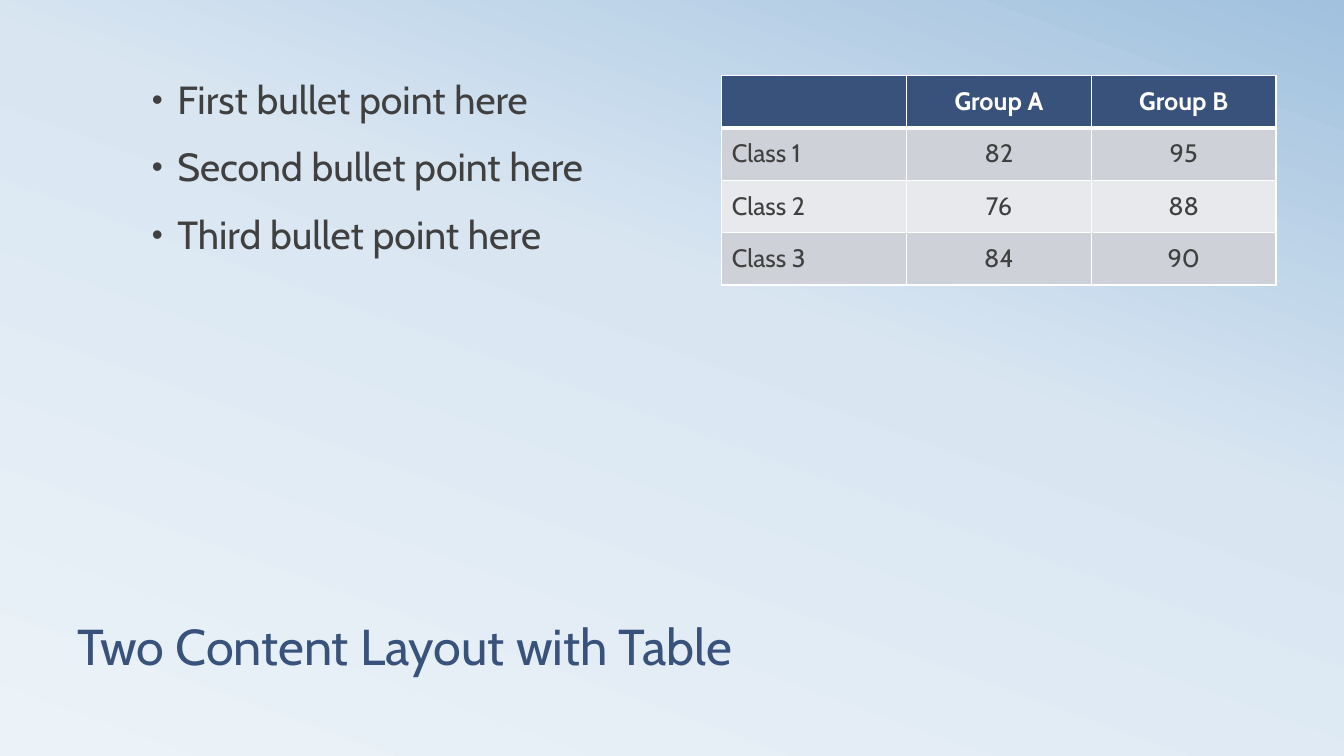
import copy
from dataclasses import dataclass

import pptx
import pptx.dml.color
import pptx.enum.text
import pptx.oxml
import pptx.oxml.ns
import pptx.util

Cm = pptx.util.Cm
Pt = pptx.util.Pt
Align = pptx.enum.text.PP_ALIGN
Anchor = pptx.enum.text.MSO_ANCHOR
qn = pptx.oxml.ns.qn


@dataclass(frozen=True)
class Theme:
    font: str = "Cabin"
    navy: str = "39527B"
    ink: str = "404040"
    white: str = "FFFFFF"
    bands: tuple = ("CED1D7", "E8E9EC")
    sky: tuple = ((0, "ECF3F8"), (0.58, "D9E6F2"), (1, "A1C1DE"))
    angle: int = 70
    title: int = 36
    body: int = 28
    cell: int = 18
    thin: int = 1
    thick: int = 3


THEME = Theme()

TITLE = "Two Content Layout with Table"
POINTS = (
    "First bullet point here",
    "Second bullet point here",
    "Third bullet point here",
)
SCORES = (
    ("", "Group A", "Group B"),
    ("Class 1", "82", "95"),
    ("Class 2", "76", "88"),
    ("Class 3", "84", "90"),
)


def rgb(code):
    return pptx.dml.color.RGBColor.from_string(code)


def add_node(parent, tag, attrs, inner=""):
    space = pptx.oxml.ns.nsdecls("a")
    xml = f"<a:{tag} {space} {attrs}>{inner}</a:{tag}>"
    parent.append(pptx.oxml.parse_xml(xml))


def paint_sky(slide):
    fill = slide.background.fill
    fill.gradient()
    fill.gradient_angle = THEME.angle
    stops = next(slide.element.iter(qn("a:gsLst")))
    stops.append(copy.deepcopy(stops[0]))
    for stop, (place, code) in zip(fill.gradient_stops, THEME.sky):
        stop.position = place
        stop.color.rgb = rgb(code)


def add_run(para, text, size, code, bold=False):
    run = para.add_run()
    run.text = text
    font = run.font
    font.name = THEME.font
    font.size = Pt(size)
    font.bold = bold
    font.color.rgb = rgb(code)


def add_box(slide, left, top, width, height, anchor):
    box = slide.shapes.add_textbox(Cm(left), Cm(top), Cm(width), Cm(height))
    frame = box.text_frame
    frame.word_wrap = True
    frame.vertical_anchor = anchor
    return frame


def add_title(slide, text):
    frame = add_box(slide, 1.7, 14.17, 30.48, 2.97, Anchor.BOTTOM)
    para = frame.paragraphs[0]
    para.line_spacing = 0.8
    add_run(para, text, THEME.title, THEME.navy)


def set_bullet(para):
    props = para._p.get_or_add_pPr()
    props.set("marL", str(Cm(0.64)))
    props.set("indent", str(Cm(-0.64)))
    add_node(props, "buClr", "", f'<a:srgbClr val="{THEME.ink}"/>')
    add_node(props, "buSzPct", 'val="80000"')
    add_node(props, "buFont", 'typeface="Arial"')
    add_node(props, "buChar", 'char="•"')


def add_list(slide, points):
    frame = add_box(slide, 3.58, 1.9, 13.97, 11.63, Anchor.TOP)
    for index, text in enumerate(points):
        para = frame.add_paragraph() if index else frame.paragraphs[0]
        para.line_spacing = 0.9
        para.space_before = Pt(18)
        set_bullet(para)
        add_run(para, text, THEME.body, THEME.ink)


def set_edges(cell, row):
    props = cell._tc.get_or_add_tcPr()
    wide = {"T": row == 1, "B": row == 0}
    paint = f'<a:solidFill><a:srgbClr val="{THEME.white}"/></a:solidFill>'
    for side in "LRTB":
        width = Pt(THEME.thick if wide.get(side) else THEME.thin)
        add_node(props, f"ln{side}", f'w="{width}"', paint)


def fill_cell(cell, text, row, col):
    head = row == 0
    set_edges(cell, row)
    cell.fill.solid()
    cell.fill.fore_color.rgb = rgb(THEME.navy if head else THEME.bands[(row - 1) % 2])
    cell.vertical_anchor = Anchor.MIDDLE
    para = cell.text_frame.paragraphs[0]
    para.alignment = Align.CENTER if head or col else Align.LEFT
    if text:
        add_run(para, text, THEME.cell, THEME.white if head else THEME.ink, head)


def add_grid(slide, rows):
    frame = slide.shapes.add_table(
        len(rows), len(rows[0]), Cm(18.19), Cm(1.9), Cm(13.97), Cm(5.28)
    )
    for row, texts in enumerate(rows):
        for col, text in enumerate(texts):
            fill_cell(frame.table.cell(row, col), text, row, col)


def main():
    deck = pptx.Presentation()
    deck.slide_width = Cm(33.87)
    deck.slide_height = Cm(19.05)
    slide = deck.slides.add_slide(deck.slide_layouts[6])
    paint_sky(slide)
    add_title(slide, TITLE)
    add_list(slide, POINTS)
    add_grid(slide, SCORES)
    deck.save("out.pptx")


if __name__ == "__main__":
    main()
